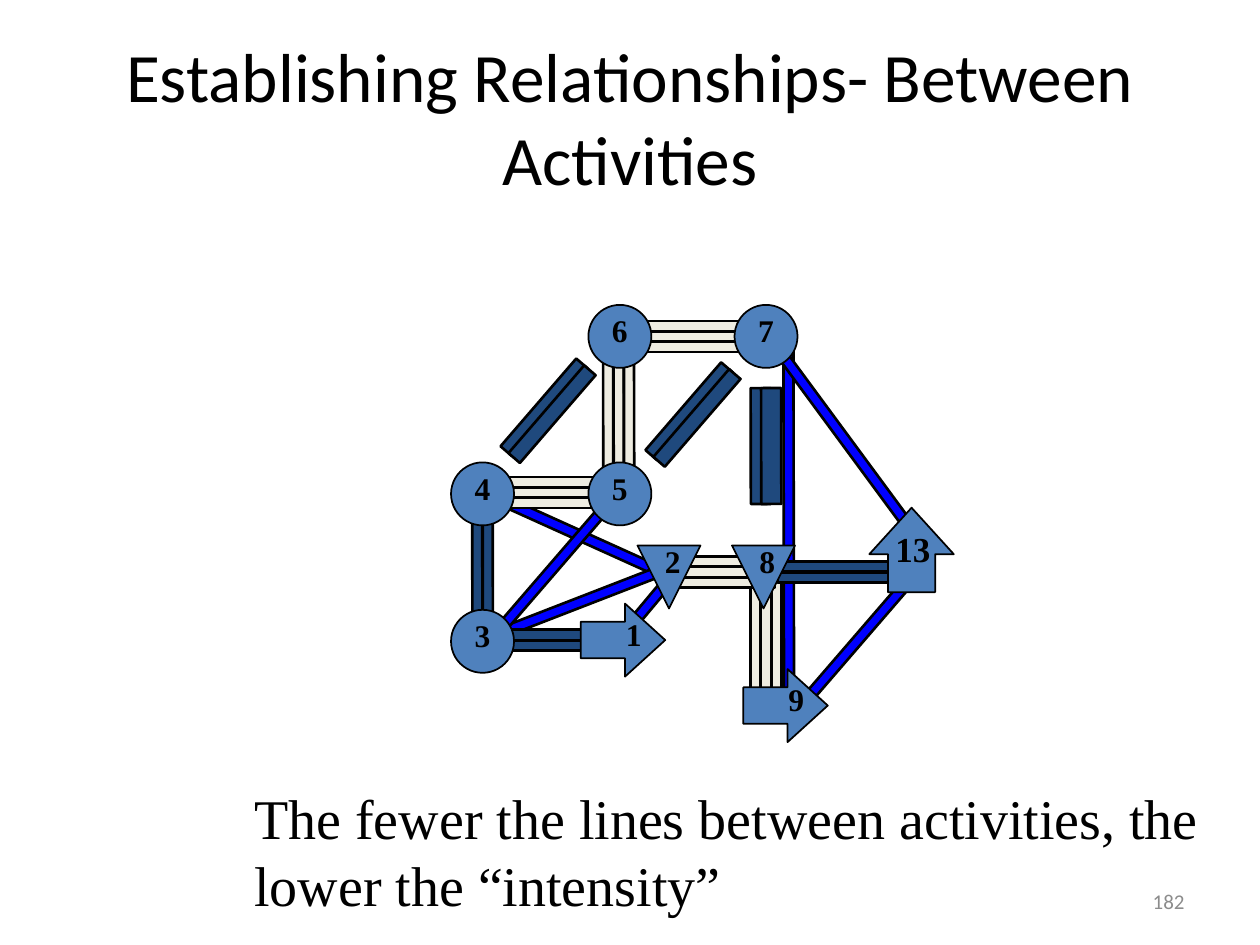
from dataclasses import dataclass
from math import cos, radians, sin

from pptx import Presentation
from pptx.dml.color import RGBColor
from pptx.enum.shapes import MSO_SHAPE
from pptx.enum.text import MSO_ANCHOR, MSO_AUTO_SIZE, PP_ALIGN
from pptx.util import Inches, Pt

RECTANGLE = MSO_SHAPE.RECTANGLE
CIRCLE = MSO_SHAPE.FLOWCHART_CONNECTOR
TRIANGLE = MSO_SHAPE.FLOWCHART_MERGE
RIGHT_ARROW = MSO_SHAPE.RIGHT_ARROW
UP_ARROW = MSO_SHAPE.UP_ARROW
LEFT, CENTER, RIGHT = PP_ALIGN.LEFT, PP_ALIGN.CENTER, PP_ALIGN.RIGHT
TOP, MIDDLE = MSO_ANCHOR.TOP, MSO_ANCHOR.MIDDLE

BLACK = RGBColor(0x00, 0x00, 0x00)
GRAY = RGBColor(0x8C, 0x8C, 0x8C)
BRIGHT_BLUE = RGBColor(0x00, 0x00, 0xFF)
DARK_BLUE = RGBColor(0x1F, 0x49, 0x7D)
NODE_BLUE = RGBColor(0x4F, 0x81, 0xBD)
CREAM = RGBColor(0xEE, 0xEC, 0xE1)

HEADING_FONT = "Calibri"
DIAGRAM_FONT = "Times New Roman"
LINE_PITCH = 0.083

# center x, center y, length, angle
SINGLE_LINKS = [
    (6.26, 4.12, 2.75, 269.9),
    (6.72, 3.51, 1.75, 53.6),
    (6.8, 5.09, 1.41, 310.8),
    (5.12, 4.83, 0.67, 309.9),
    (4.6, 4.25, 1.41, 204.3),
    (4.58, 4.79, 1.41, 338.8),
    (4.38, 4.52, 1.41, 310.8),
]

# center x, center y, angle, line count, line thickness
BUNDLES = [
    (6.08, 5.04, 270, 3, 0.08),
    (6.63, 4.54, 0, 2, 0.08),
    (6.08, 3.54, 269.9, 2, 0.16),
    (5.69, 4.54, 0, 3, 0.08),
    (5.5, 3.29, 310.8, 2, 0.12),
    (4.35, 3.26, 310.8, 2, 0.12),
    (4.38, 5.08, 0, 2, 0.08),
    (3.83, 4.54, 269.9, 2, 0.08),
    (4.91, 3.27, 269.9, 3, 0.08),
    (5.51, 2.67, 0, 3, 0.08),
    (4.38, 3.91, 0, 3, 0.08),
]
BUNDLE_COLORS = {2: DARK_BLUE, 3: CREAM}

CIRCLES = [("6", 4.67, 2.42), ("7", 5.83, 2.42), ("5", 4.67, 3.67),
           ("4", 3.58, 3.67), ("3", 3.58, 4.84)]
ARROWS = [("1", 4.61, 4.79), ("9", 5.9, 5.31)]
TRIANGLES = [("2", 5.06, 4.33), ("8", 5.81, 4.33)]


@dataclass
class SlideBuilder:
    slide: object
    node_color: RGBColor = NODE_BLUE
    outline: RGBColor = BLACK

    def style_text(self, text_frame, text, size, font, color, align, bold=False):
        text_frame.text = text
        paragraph = text_frame.paragraphs[0]
        paragraph.alignment = align
        for run in paragraph.runs:
            run.font.size = Pt(size)
            run.font.name = font
            run.font.bold = bold
            run.font.color.rgb = color

    def title(self, text, left, top, width, height):
        shape = self.slide.shapes.title
        shape.left, shape.top = Inches(left), Inches(top)
        shape.width, shape.height = Inches(width), Inches(height)
        text_frame = shape.text_frame
        text_frame.auto_size = MSO_AUTO_SIZE.NONE
        text_frame.vertical_anchor = MIDDLE
        self.style_text(text_frame, text, 39.6, HEADING_FONT, BLACK, CENTER)

    def text(self, text, left, top, width, height, size, font=DIAGRAM_FONT,
             color=BLACK, align=LEFT, anchor=TOP, bold=False):
        box = self.slide.shapes.add_textbox(
            Inches(left), Inches(top), Inches(width), Inches(height))
        box.text_frame.word_wrap = True
        box.text_frame.vertical_anchor = anchor
        self.style_text(box.text_frame, text, size, font, color, align, bold)

    def shape(self, kind, left, top, width, height, fill, line_width):
        shape = self.slide.shapes.add_shape(
            kind, Inches(left), Inches(top), Inches(width), Inches(height))
        shape.shadow.inherit = False
        shape.fill.solid()
        shape.fill.fore_color.rgb = fill
        shape.line.color.rgb = self.outline
        shape.line.width = Pt(line_width)
        return shape

    def link(self, x, y, length, angle, color, thickness=0.08):
        bar = self.shape(RECTANGLE, x - length / 2, y - thickness / 2,
                         length, thickness, color, 1.5)
        bar.rotation = angle

    def bundle(self, x, y, angle, count, thickness):
        for index in range(count):
            offset = (index - (count - 1) / 2) * LINE_PITCH
            self.link(x - offset * sin(radians(angle)),
                      y + offset * cos(radians(angle)),
                      0.92, angle, BUNDLE_COLORS[count], thickness)

    def node(self, kind, label, left, top, width, height, label_box,
             size=18, adjustments=()):
        shape = self.shape(kind, left, top, width, height, self.node_color, 1)
        for index, value in enumerate(adjustments):
            shape.adjustments[index] = value
        x, y, label_width, label_height = label_box
        self.text(label, left + x, top + y, label_width, label_height, size,
                  align=CENTER, bold=True)


def main():
    presentation = Presentation()
    presentation.slide_width = Inches(10)
    presentation.slide_height = Inches(7.5)
    slide = presentation.slides.add_slide(presentation.slide_layouts[5])
    builder = SlideBuilder(slide)

    builder.title("Establishing Relationships- Between Activities", 0.5, 0.3, 9, 1.25)
    builder.text("182", 7.17, 6.95, 2.33, 0.4, 12, HEADING_FONT, GRAY, RIGHT, MIDDLE)

    for x, y, length, angle in SINGLE_LINKS:
        builder.link(x, y, length, angle, BRIGHT_BLUE)
    for bundle in BUNDLES:
        builder.bundle(*bundle)

    for label, left, top in CIRCLES:
        builder.node(CIRCLE, label, left, top, 0.5, 0.5, (0, 0, 0.5, 0.5))
    for label, left, top in ARROWS:
        builder.node(RIGHT_ARROW, label, left, top, 0.67, 0.58,
                     (0.17, 0.04, 0.5, 0.5), adjustments=(0.5, 0.55))
    for label, left, top in TRIANGLES:
        builder.node(TRIANGLE, label, left, top, 0.5, 0.5, (0.03, -0.08, 0.5, 0.5))
    builder.node(UP_ARROW, "13", 6.9, 4.03, 0.67, 0.67, (0.01, 0.11, 0.67, 0.43),
                 size=20, adjustments=(0.56, 0.55))

    builder.text("The fewer the lines between activities, the lower the “intensity”",
                 1.92, 6.17, 7.9, 1.17, 32)
    presentation.save("out.pptx")


if __name__ == "__main__":
    main()
